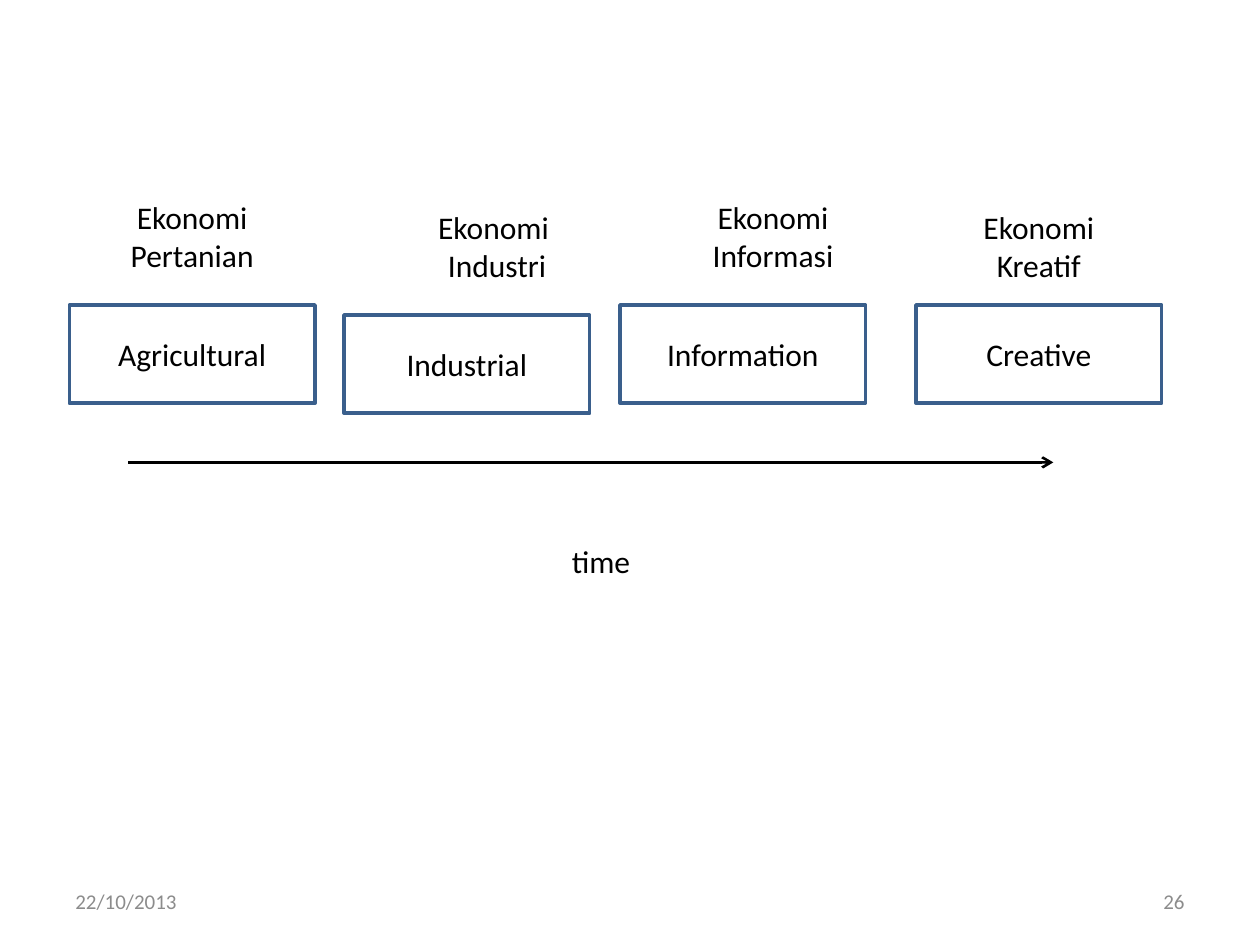
from lxml import etree
from pptx import Presentation, util as u
from pptx.dml.color import RGBColor
from pptx.enum import shapes, text
from pptx.oxml import ns

WIDE, HIGH = 10, 7.5
BOX_W, BOX_H = 1.95, 0.78
BOX_TOP, TAG_TOP, DROP = 2.42, 1.48, 0.08
BLUE, WHITE, BLACK, GREY = "3A5F8C", "FFFFFF", "000000", "8C8C8C"
ERAS = [
    ("Agricultural", "Ekonomi Pertanian", 0.55, 0.55, 0, 0),
    ("Industrial", "Ekonomi \nIndustri", 2.73, 2.97, DROP, DROP),
    ("Information", "Ekonomi Informasi", 4.92, 5.16, 0, 0),
    ("Creative", "Ekonomi\nKreatif", 7.27, 7.27, 0, DROP),
]


def tint(code):
    """Turn a hex string into a colour."""
    return RGBColor.from_string(code)


def write(shape, words, size, color, align):
    """Set the text of a shape, centred in height."""
    frame = shape.text_frame
    frame.word_wrap = True
    frame.vertical_anchor = text.MSO_ANCHOR.MIDDLE
    frame.text = words
    for para in frame.paragraphs:
        para.alignment = align
        para.font.name = "Calibri"
        para.font.size = u.Pt(size)
        para.font.color.rgb = tint(color)


def add_box(slide, words, left, top, edge, width=BOX_W):
    """Draw a white box with centred words."""
    box = slide.shapes.add_shape(
        shapes.MSO_SHAPE.RECTANGLE,
        u.Inches(left), u.Inches(top), u.Inches(width), u.Inches(BOX_H))
    box.shadow.inherit = False
    box.fill.solid()
    box.fill.fore_color.rgb = tint(WHITE)
    box.line.color.rgb = tint(edge)
    box.line.width = u.Pt(2)
    write(box, words, 18, BLACK, text.PP_ALIGN.CENTER)


def add_arrow(slide, start, end, level):
    """Draw a level arrow that points right."""
    arrow = slide.shapes.add_connector(
        shapes.MSO_CONNECTOR.STRAIGHT,
        u.Inches(start), u.Inches(level), u.Inches(end), u.Inches(level))
    arrow.line.color.rgb = tint(BLACK)
    arrow.line.width = u.Pt(1.5)
    etree.SubElement(arrow.line._get_or_add_ln(), ns.qn("a:tailEnd"), type="arrow")
    etree.SubElement(arrow._element.spPr, ns.qn("a:effectLst"))


def add_foot(slide, words, left, align):
    """Write a small grey note at the foot of the slide."""
    note = slide.shapes.add_textbox(
        u.Inches(left), u.Inches(6.95), u.Inches(2.33), u.Inches(0.4))
    write(note, words, 12, GREY, align)


def main():
    """Build the slide and save it."""
    deck = Presentation()
    deck.slide_width, deck.slide_height = u.Inches(WIDE), u.Inches(HIGH)
    slide = deck.slides.add_slide(deck.slide_layouts[6])
    add_foot(slide, "22/10/2013", 0.5, text.PP_ALIGN.LEFT)
    add_foot(slide, "26", 7.17, text.PP_ALIGN.RIGHT)
    for name, _, left, _, drop, _ in ERAS:
        add_box(slide, name, left, BOX_TOP + drop, BLUE)
    add_arrow(slide, 1.02, 8.36, 3.67)
    for _, tag, _, left, _, drop in ERAS:
        add_box(slide, tag, left, TAG_TOP + drop, WHITE)
    add_box(slide, "time", 3.05, 4.06, WHITE, 3.44)
    deck.save("out.pptx")


if __name__ == "__main__":
    main()
